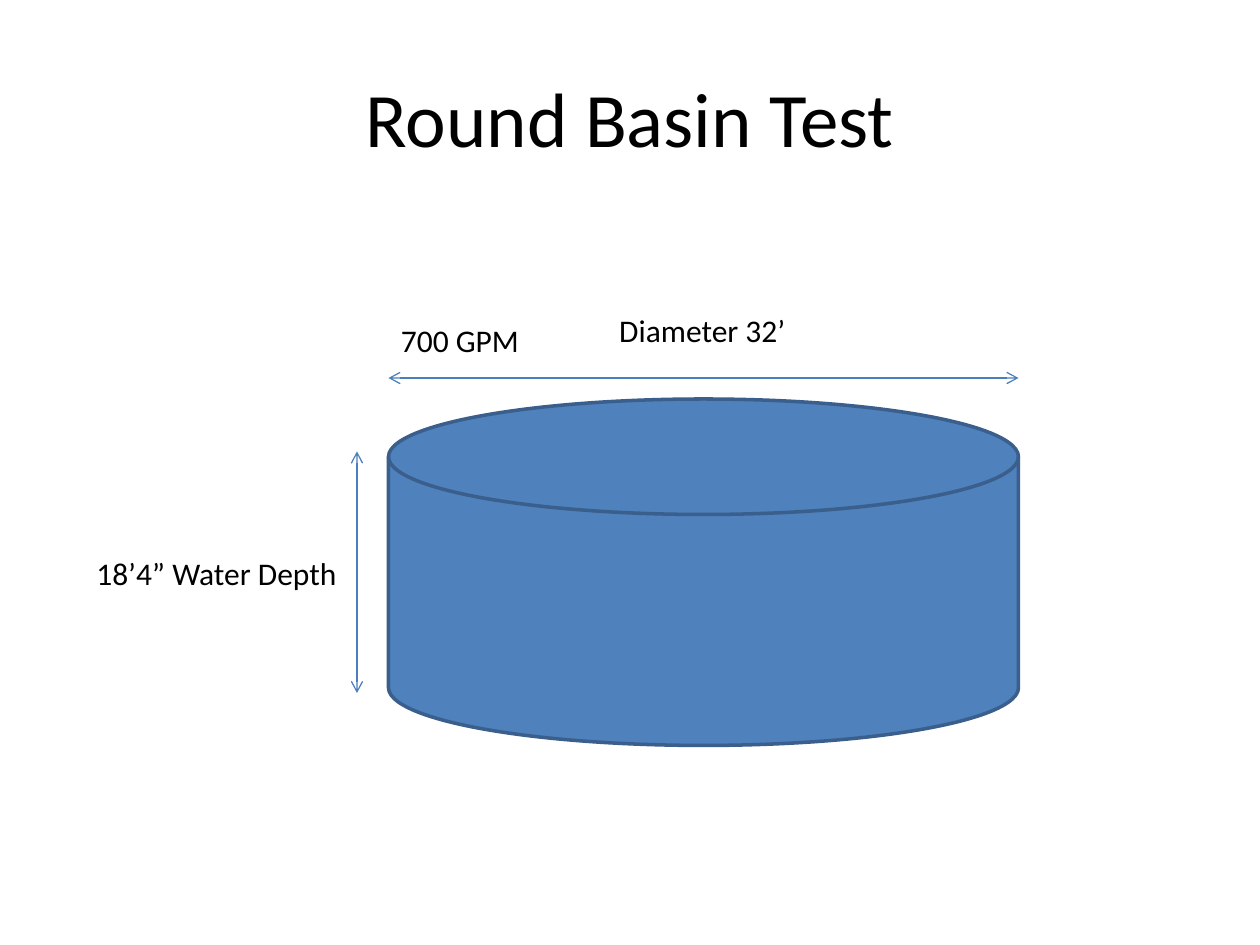
from dataclasses import dataclass

from lxml import etree
from pptx import Presentation
from pptx.dml.color import RGBColor
from pptx.enum import shapes, text
from pptx.oxml.ns import qn
from pptx.util import Pt


@dataclass(frozen=True)
class Theme:
    font: str = "Calibri"
    ink: RGBColor = RGBColor(0x00, 0x00, 0x00)
    basin_fill: RGBColor = RGBColor(0x4F, 0x81, 0xBD)
    basin_edge: RGBColor = RGBColor(0x3A, 0x5F, 0x8C)
    dimension: RGBColor = RGBColor(0x4B, 0x7E, 0xBC)
    title_size: float = 44
    label_size: float = 18
    edge_width: float = 2
    dimension_width: float = 0.75


@dataclass(frozen=True)
class Box:
    left: float
    top: float
    width: float
    height: float

    @property
    def right(self) -> float:
        return self.left + self.width

    def lengths(self) -> tuple:
        return Pt(self.left), Pt(self.top), Pt(self.width), Pt(self.height)


@dataclass(frozen=True)
class Label:
    wording: str
    box: Box


@dataclass(frozen=True)
class Dimension:
    start: tuple[float, float]
    end: tuple[float, float]


THEME = Theme()
TITLE = Label("Round Basin Test", Box(36, 21.6, 648, 90))
BASIN = Box(222, 228, 360, 198)
DIAMETER_Y = BASIN.top - 12
DEPTH_X = BASIN.left - 18
DIMENSIONS = (
    Dimension((BASIN.right, DIAMETER_Y), (BASIN.left, DIAMETER_Y)),
    Dimension((DEPTH_X, 258), (DEPTH_X, 396)),
)
LABELS = (
    Label("18’4” Water Depth", Box(48, 313.2, 153.4, 29.08)),
    Label("700 GPM", Box(BASIN.left, 180, 82.8, 29.08)),
    Label("Diameter 32’", Box(346.8, 174, 110.9, 29.08)),
)


def style_paragraph(paragraph, size: float) -> None:
    paragraph.font.name = THEME.font
    paragraph.font.size = Pt(size)
    paragraph.font.color.rgb = THEME.ink


def set_title(slide, title: Label) -> None:
    heading = slide.shapes.title
    heading.left, heading.top, heading.width, heading.height = title.box.lengths()
    frame = heading.text_frame
    frame.text = title.wording
    frame.vertical_anchor = text.MSO_ANCHOR.MIDDLE
    frame.paragraphs[0].alignment = text.PP_ALIGN.CENTER
    style_paragraph(frame.paragraphs[0], THEME.title_size)


def add_basin(slide, box: Box) -> None:
    basin = slide.shapes.add_shape(
        shapes.MSO_SHAPE.FLOWCHART_MAGNETIC_DISK, *box.lengths())
    basin.shadow.inherit = False
    basin.fill.solid()
    basin.fill.fore_color.rgb = THEME.basin_fill
    basin.line.color.rgb = THEME.basin_edge
    basin.line.width = Pt(THEME.edge_width)


def add_dimension(slide, dimension: Dimension) -> None:
    """Draw a line with an open arrowhead at each end."""
    arrow = slide.shapes.add_connector(
        shapes.MSO_CONNECTOR.STRAIGHT,
        *map(Pt, dimension.start + dimension.end))
    arrow.line.color.rgb = THEME.dimension
    arrow.line.width = Pt(THEME.dimension_width)
    outline = arrow.line._get_or_add_ln()
    for end in ("a:headEnd", "a:tailEnd"):
        etree.SubElement(outline, qn(end), type="arrow")
    etree.SubElement(arrow._element.spPr, qn("a:effectLst"))


def add_label(slide, label: Label) -> None:
    frame = slide.shapes.add_textbox(*label.box.lengths()).text_frame
    frame.word_wrap = False
    frame.auto_size = text.MSO_AUTO_SIZE.SHAPE_TO_FIT_TEXT
    frame.text = label.wording
    style_paragraph(frame.paragraphs[0], THEME.label_size)


def main() -> None:
    presentation = Presentation()
    presentation.slide_width, presentation.slide_height = Pt(720), Pt(540)
    title_only = presentation.slide_layouts.get_by_name("Title Only")
    slide = presentation.slides.add_slide(title_only)
    set_title(slide, TITLE)
    add_basin(slide, BASIN)
    for dimension in DIMENSIONS:
        add_dimension(slide, dimension)
    for label in LABELS:
        add_label(slide, label)
    presentation.save("out.pptx")


if __name__ == "__main__":
    main()
